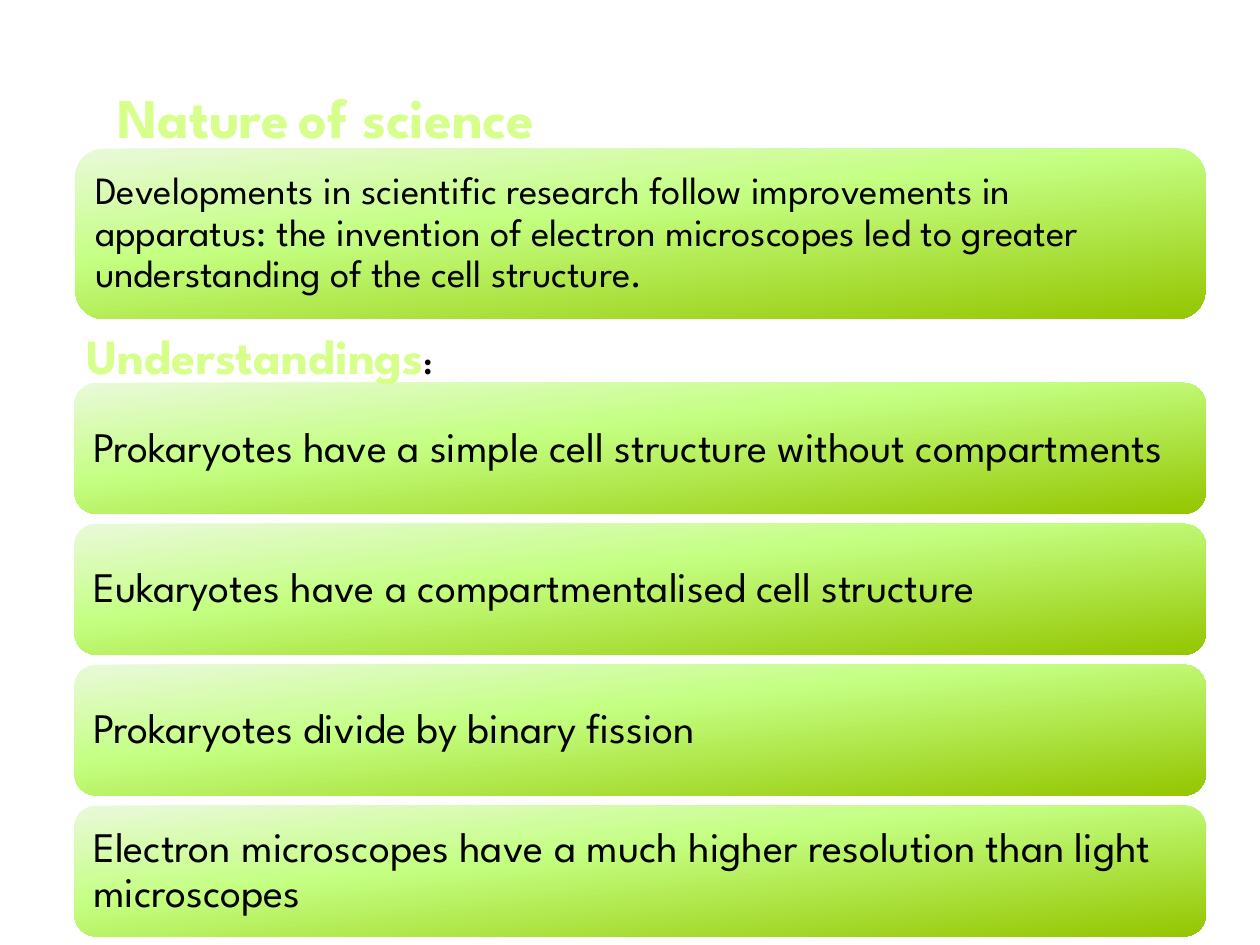
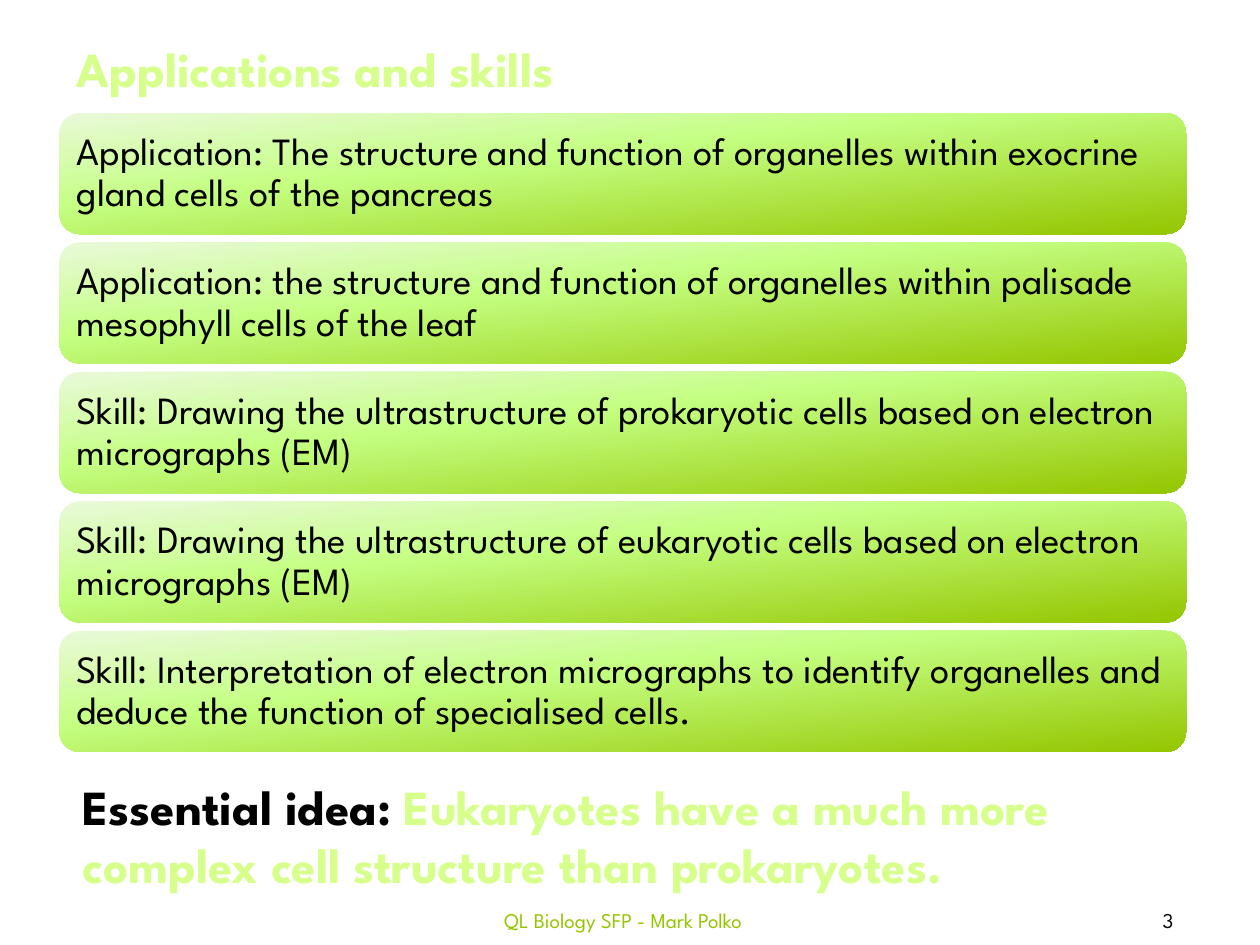
"""Build two slides on cell structure: rounded bands under bold headings."""
import dataclasses
import typing

import pptx
import pptx.dml.color
import pptx.enum.shapes
import pptx.enum.text
import pptx.oxml
import pptx.oxml.ns
import pptx.util

Cm = pptx.util.Cm
Pt = pptx.util.Pt
Align = pptx.enum.text.PP_ALIGN
Anchor = pptx.enum.text.MSO_ANCHOR
Fit = pptx.enum.text.MSO_AUTO_SIZE

FACE = "League Spartan"
HUES = {
    "ink": "000000",
    "lime": "D6FF8C",
    "edge": "434128",
    "pale": "EAF9DA",
    "mid": "C4FF82",
    "leaf": "94C600",
}
FADE = {0: "pale", 40: "mid", 100: "leaf"}
SPACE = 'xmlns:a="http://schemas.openxmlformats.org/drawingml/2006/main"'


@dataclasses.dataclass(frozen=True)
class Run:
    text: str
    size: float
    hue: str = "ink"
    bold: bool = False
    edge: bool = False


@dataclasses.dataclass(frozen=True)
class Stack:
    left: float
    top: float
    width: float
    height: float
    pitch: float
    size: float
    inset: float
    lines: tuple[str, ...]


@dataclasses.dataclass(frozen=True)
class Label:
    left: float
    top: float
    width: float
    height: float
    runs: tuple[Run, ...]
    wrap: bool = True
    grow: bool = True
    align: Align = Align.LEFT


def title(text: str, size: float, hue: str = "lime") -> Run:
    """Return a bold, outlined run."""
    return Run(text, size, hue, bold=True, edge=True)


def footer(left: float, width: float, text: str, hue: str) -> Label:
    """Return a centred label for the foot of a slide."""
    return Label(left, 18.03, width, 1.02, (Run(text, 12, hue),),
                 grow=False, align=Align.CENTER)


SLIDES = (
    (
        Stack(1.5, 7.72, 22.81, 2.64, 2.84, 24, 0.25, (
            "Prokaryotes have a simple cell structure without compartments",
            "Eukaryotes have a compartmentalised cell structure",
            "Prokaryotes divide by binary fission",
            "Electron microscopes have a much higher resolution than light microscopes",
        )),
        Stack(1.52, 3, 22.78, 3.43, 0, 22, 0.23, (
            "Developments in scientific research follow improvements in apparatus: "
            "the invention of electron microscopes led to greater understanding "
            "of the cell structure.",
        )),
        Label(1.5, 6.43, 8.13, 1.45,
              (title("Understandings", 28), Run(":", 18, bold=True)), wrap=False),
        Label(1.48, 1.53, 10.19, 1.63,
              (title("Nature", 32), Run(" ", 20, bold=True), title("of science", 32)),
              wrap=False, align=Align.CENTER),
    ),
    (
        footer(21.69, 3.71, "3", "ink"),
        footer(7.7, 9.73, "QL Biology SFP - Mark Polko", "leaf"),
        Stack(1.2, 2.28, 22.71, 2.44, 2.61, 22, 0.23, (
            "Application: The structure and function of organelles within "
            "exocrine gland cells of the pancreas",
            "Application: the structure and function of organelles within "
            "palisade mesophyll cells of the leaf",
            "Skill: Drawing the ultrastructure of prokaryotic cells based on "
            "electron micrographs (EM)",
            "Skill: Drawing the ultrastructure of eukaryotic cells based on "
            "electron micrographs (EM)",
            "Skill: Interpretation of electron micrographs to identify organelles "
            "and deduce the function of specialised cells.",
        )),
        Label(1.3, 0.66, 12.19, 1.45, (title("Applications and skills", 28),)),
        Label(1.42, 15.52, 22.94, 2.64, (
            title("Essential idea:", 28, "ink"),
            title(" Eukaryotes have a much more complex cell structure than prokaryotes.", 28),
        )),
    ),
)


def apply(item: typing.Any, style: dict[str, typing.Any]) -> None:
    """Set each format value on an object."""
    for name, value in style.items():
        setattr(item, name, value)


def solid(hue: str) -> str:
    """Return the XML of a colour."""
    return f'<a:srgbClr val="{HUES[hue]}"/>'


def write(par: typing.Any, run: Run) -> None:
    """Add a run to a paragraph."""
    piece = par.add_run()
    piece.text = run.text
    apply(piece.font, {"name": FACE, "size": Pt(run.size), "bold": run.bold})
    piece.font.color.rgb = pptx.dml.color.RGBColor.from_string(HUES[run.hue])
    if run.edge:
        line = f'<a:ln {SPACE} w="12700"><a:solidFill>{solid("edge")}</a:solidFill></a:ln>'
        piece.font._element.insert(0, pptx.oxml.parse_xml(line))


def shade(shape: typing.Any) -> None:
    """Fill a shape with the green fade."""
    shape.fill.background()
    stops = "".join(f'<a:gs pos="{pos * 1000}">{solid(hue)}</a:gs>'
                    for pos, hue in FADE.items())
    fade = (f'<a:gradFill {SPACE} rotWithShape="1"><a:gsLst>{stops}</a:gsLst>'
            f'<a:lin ang="{84 * 60000}" scaled="0"/></a:gradFill>')
    props = shape._element.spPr
    props.replace(props.find(pptx.oxml.ns.qn("a:noFill")), pptx.oxml.parse_xml(fade))


def draw_stack(slide: typing.Any, stack: Stack) -> None:
    """Draw evenly spaced bands, one per line of text."""
    kind = pptx.enum.shapes.MSO_SHAPE.ROUNDED_RECTANGLE
    sides = ("left", "top", "right", "bottom")
    for row, text in enumerate(stack.lines):
        band = slide.shapes.add_shape(
            kind, Cm(stack.left), Cm(stack.top + row * stack.pitch),
            Cm(stack.width), Cm(stack.height))
        band.shadow.inherit = False
        band.line.fill.background()
        shade(band)
        frame = band.text_frame
        apply(frame, {"word_wrap": True, "vertical_anchor": Anchor.MIDDLE})
        apply(frame, {f"margin_{side}": Cm(stack.inset) for side in sides})
        par = frame.paragraphs[0]
        apply(par, {"alignment": Align.LEFT, "line_spacing": 0.9})
        write(par, Run(text, stack.size))


def draw_label(slide: typing.Any, label: Label) -> None:
    """Draw a text box with its runs."""
    box = slide.shapes.add_textbox(
        Cm(label.left), Cm(label.top), Cm(label.width), Cm(label.height))
    apply(box.text_frame, {
        "word_wrap": label.wrap,
        "auto_size": Fit.SHAPE_TO_FIT_TEXT if label.grow else Fit.NONE,
        "vertical_anchor": Anchor.TOP if label.grow else Anchor.MIDDLE,
    })
    par = box.text_frame.paragraphs[0]
    par.alignment = label.align
    for run in label.runs:
        write(par, run)


def main() -> None:
    """Build and save the deck."""
    deck = pptx.Presentation()
    apply(deck, {"slide_width": Cm(25.4), "slide_height": Cm(19.05)})
    tools = {Stack: draw_stack, Label: draw_label}
    for parts in SLIDES:
        slide = deck.slides.add_slide(deck.slide_layouts[6])
        for part in parts:
            tools[type(part)](slide, part)
    deck.save("out.pptx")


if __name__ == "__main__":
    main()
